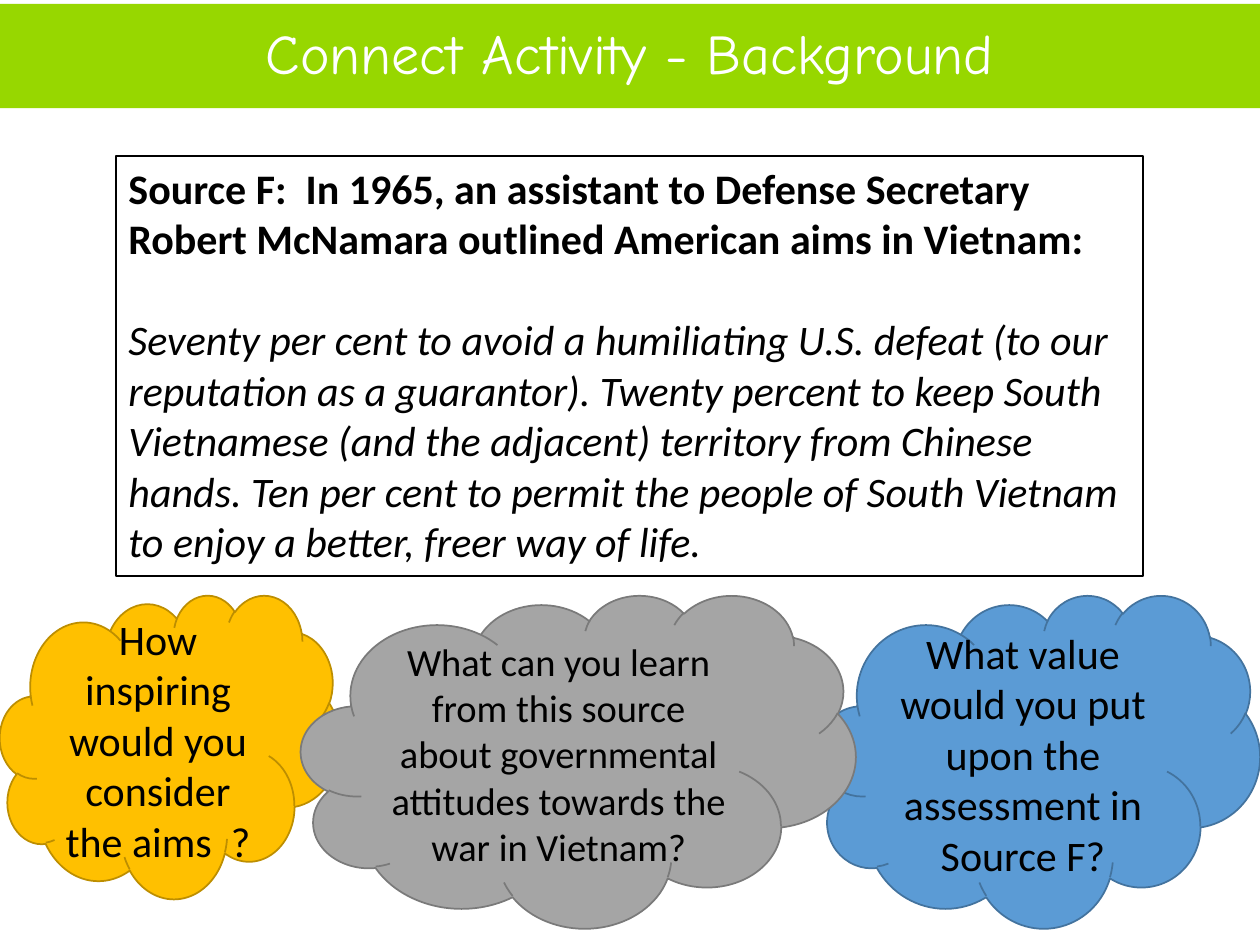
from pptx import Presentation
from pptx.dml.color import RGBColor
from pptx.enum.shapes import MSO_SHAPE
from pptx.enum.text import MSO_ANCHOR, MSO_AUTO_SIZE, PP_ALIGN
from pptx.util import Cm, Pt

CLOUD = MSO_SHAPE.CLOUD
MIDDLE, TOP = MSO_ANCHOR.MIDDLE, MSO_ANCHOR.TOP
CENTER, LEFT = PP_ALIGN.CENTER, PP_ALIGN.LEFT
NO_FIT = MSO_AUTO_SIZE.NONE
TITLE_ONLY = 5
PAGE_WIDTH, PAGE_HEIGHT = 25.4, 19.05
CLOUD_TOP = 11.99

SOURCE_HEADING = (
    "Source F:  In 1965, an assistant to Defense Secretary Robert McNamara "
    "outlined American aims in Vietnam:"
)
SOURCE_QUOTE = (
    "Seventy per cent to avoid a humiliating U.S. defeat (to our reputation as a "
    "guarantor). Twenty percent to keep South Vietnamese (and the adjacent) "
    "territory from Chinese hands. Ten per cent to permit the people of South "
    "Vietnam to enjoy a better, freer way of life."
)
QUESTIONS = [
    ("How inspiring would you consider the aims  ?",
     (0, CLOUD_TOP, 6.86, 6.12), "FFC000", "BD8E00", 24),
    ("What value would you put upon the assessment in Source F?",
     (16.48, CLOUD_TOP, 8.92, 6.71), "5B9BD5", "43739E", 24),
    ("What can you learn from this source about governmental attitudes towards "
     "the war in Vietnam?",
     (6.07, CLOUD_TOP, 11.18, 6.71), "A5A5A5", "7A7A7A", 22),
]


def color(hex_code):
    """Turn a hex string into a colour."""
    return RGBColor.from_string(hex_code)


def set_format(target, values):
    """Set every attribute in a dict of format values."""
    for name, value in values.items():
        setattr(target, name, value)


def paint(shape, fill, line=None):
    """Give a shape a solid fill and, if asked, a thin outline."""
    shape.fill.solid()
    shape.fill.fore_color.rgb = color(fill)
    if line:
        shape.line.color.rgb = color(line)
        shape.line.width = Pt(1)


def write(para, text, size, ink="000000", align=LEFT, **font_values):
    """Write one formatted paragraph."""
    para.alignment = align
    span = para.add_run()
    span.text = text
    set_format(span.font, {"name": "Calibri", "size": Pt(size), **font_values})
    span.font.color.rgb = color(ink)


def add_title_band(page, box, text):
    """Turn the title placeholder into a coloured band across the box."""
    title = page.shapes.title
    places = ("left", "top", "width", "height")
    set_format(title, dict(zip(places, map(Cm, box))))
    paint(title, "97D700")
    set_format(title.text_frame, {
        "vertical_anchor": MIDDLE, "word_wrap": True, "auto_size": NO_FIT})
    para = title.text_frame.paragraphs[0]
    para.line_spacing = 0.93
    write(para, text, 32, "FFFFFF", CENTER, name="Comic Neue")


def add_source_panel(page, box, heading, quote):
    """Place the outlined panel with the source heading and its quote."""
    panel = page.shapes.add_textbox(*map(Cm, box))
    paint(panel, "FFFFFF", "000000")
    frame = panel.text_frame
    set_format(frame, {"vertical_anchor": TOP, "word_wrap": True})
    write(frame.paragraphs[0], heading, 24, bold=True)
    para = frame.add_paragraph()
    para.space_before = Pt(29)
    write(para, quote, 24, italic=True)


def add_question_cloud(page, box, text, fill, line, size):
    """Place a cloud with a centred question."""
    cloud = page.shapes.add_shape(CLOUD, *map(Cm, box))
    cloud.shadow.inherit = False
    paint(cloud, fill, line)
    set_format(cloud.text_frame, {"vertical_anchor": MIDDLE, "word_wrap": True})
    write(cloud.text_frame.paragraphs[0], text, size, align=CENTER)


def main():
    """Build the slide and save the deck."""
    deck = Presentation()
    set_format(deck, {"slide_width": Cm(PAGE_WIDTH), "slide_height": Cm(PAGE_HEIGHT)})
    page = deck.slides.add_slide(deck.slide_layouts[TITLE_ONLY])
    add_title_band(page, (0, 0.08, PAGE_WIDTH, 2.1), "Connect Activity - Background")
    add_source_panel(page, (2.34, 3.15, 20.7, 8.46), SOURCE_HEADING, SOURCE_QUOTE)
    for text, box, fill, line, size in QUESTIONS:
        add_question_cloud(page, box, text, fill, line, size)
    deck.save("out.pptx")


if __name__ == "__main__":
    main()
